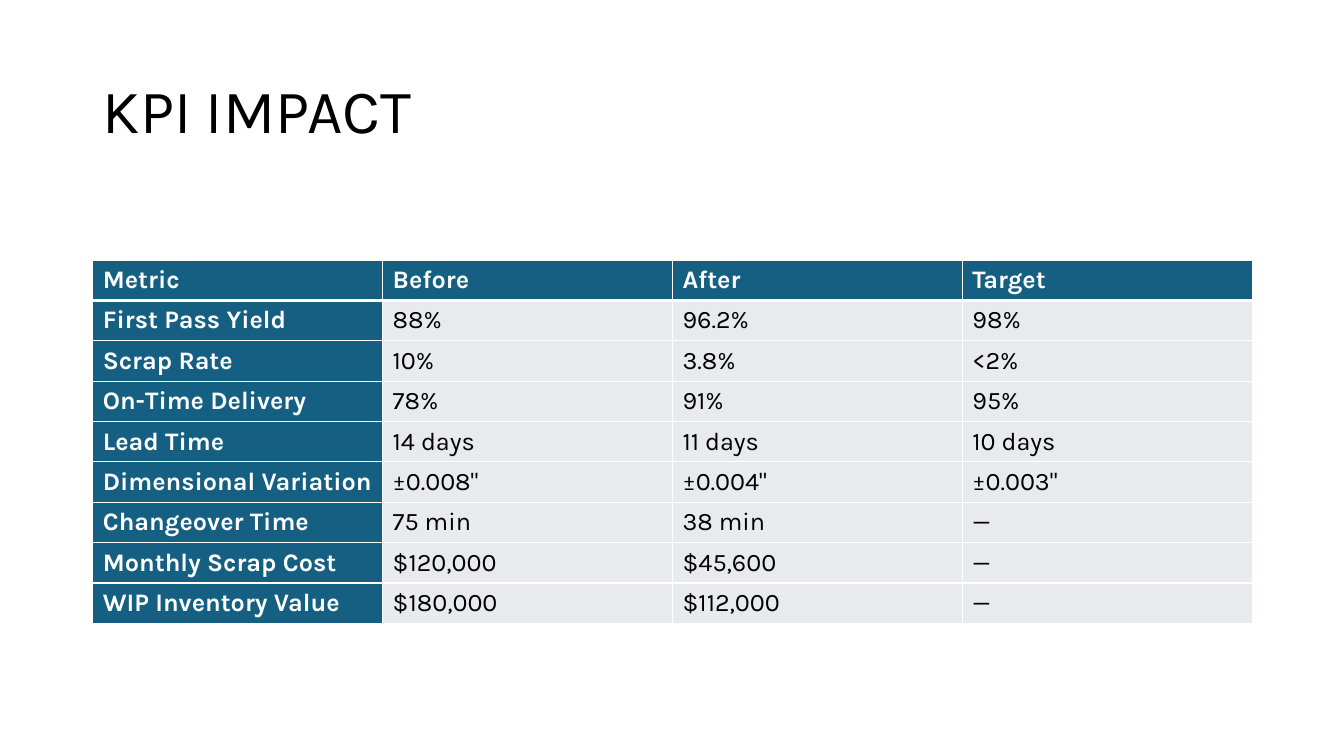
from lxml import etree
from pptx import Presentation
from pptx.dml.color import RGBColor
from pptx.enum import text
from pptx.oxml import ns
from pptx.util import Inches, Pt

FONT = "Karla"
BLACK = RGBColor(0x00, 0x00, 0x00)
WHITE = RGBColor(0xFF, 0xFF, 0xFF)
TEAL = RGBColor(0x15, 0x60, 0x82)
PALE_GRAY = RGBColor(0xE8, 0xEA, 0xED)

KPI_ROWS = [
    ("Metric", "Before", "After", "Target"),
    ("First Pass Yield", "88%", "96.2%", "98%"),
    ("Scrap Rate", "10%", "3.8%", "<2%"),
    ("On-Time Delivery", "78%", "91%", "95%"),
    ("Lead Time", "14 days", "11 days", "10 days"),
    ("Dimensional Variation", '±0.008"', '±0.004"', '±0.003"'),
    ("Changeover Time", "75 min", "38 min", "—"),
    ("Monthly Scrap Cost", "$120,000", "$45,600", "—"),
    ("WIP Inventory Value", "$180,000", "$112,000", "—"),
]


def style_font(font, size, color, bold=False):
    font.name = FONT
    font.size = Pt(size)
    font.color.rgb = color
    font.bold = bold


def set_borders(cell, top, bottom):
    """Draw white cell borders; top and bottom are widths in points."""
    properties = cell._tc.get_or_add_tcPr()
    for side, width in (("L", 1), ("R", 1), ("T", top), ("B", bottom)):
        line = etree.SubElement(properties, ns.qn(f"a:ln{side}"), w=str(Pt(width)))
        fill = etree.SubElement(line, ns.qn("a:solidFill"))
        etree.SubElement(fill, ns.qn("a:srgbClr"), val=str(WHITE))


def add_title(page, left, top, width, height, wording):
    box = page.shapes.add_textbox(left, top, width, height)
    frame = box.text_frame
    frame.word_wrap = True
    frame.vertical_anchor = text.MSO_ANCHOR.MIDDLE
    frame.text = wording
    para = frame.paragraphs[0]
    para.line_spacing = 0.9
    style_font(para.runs[0].font, 44, BLACK)


def add_kpi_table(page, left, top, width, height, rows):
    table = page.shapes.add_table(
        len(rows), len(rows[0]), left, top, width, height
    ).table
    table.first_col = True
    table.horz_banding = False
    for row_index, values in enumerate(rows):
        for column_index, value in enumerate(values):
            cell = table.cell(row_index, column_index)
            is_heading = row_index == 0 or column_index == 0
            set_borders(
                cell,
                top=3 if row_index == 1 else 1,
                bottom=3 if row_index == 0 else 1,
            )
            cell.fill.solid()
            cell.fill.fore_color.rgb = TEAL if is_heading else PALE_GRAY
            cell.vertical_anchor = text.MSO_ANCHOR.MIDDLE
            cell.text_frame.text = value
            span = cell.text_frame.paragraphs[0].runs[0]
            style_font(span.font, 18, WHITE if is_heading else BLACK, is_heading)


def add_kpi_slide(deck):
    page = deck.slides.add_slide(deck.slide_layouts[6])
    left, width = Inches(0.92), Inches(11.5)
    add_title(page, left, Inches(0.4), width, Inches(1.45), "KPI IMPACT")
    row_height = Inches(0.39)
    add_kpi_table(
        page, left, Inches(2.58), width, row_height * len(KPI_ROWS), KPI_ROWS
    )


def main():
    deck = Presentation()
    deck.slide_width = Inches(13.33)
    deck.slide_height = Inches(7.5)
    add_kpi_slide(deck)
    deck.save("out.pptx")


if __name__ == "__main__":
    main()
